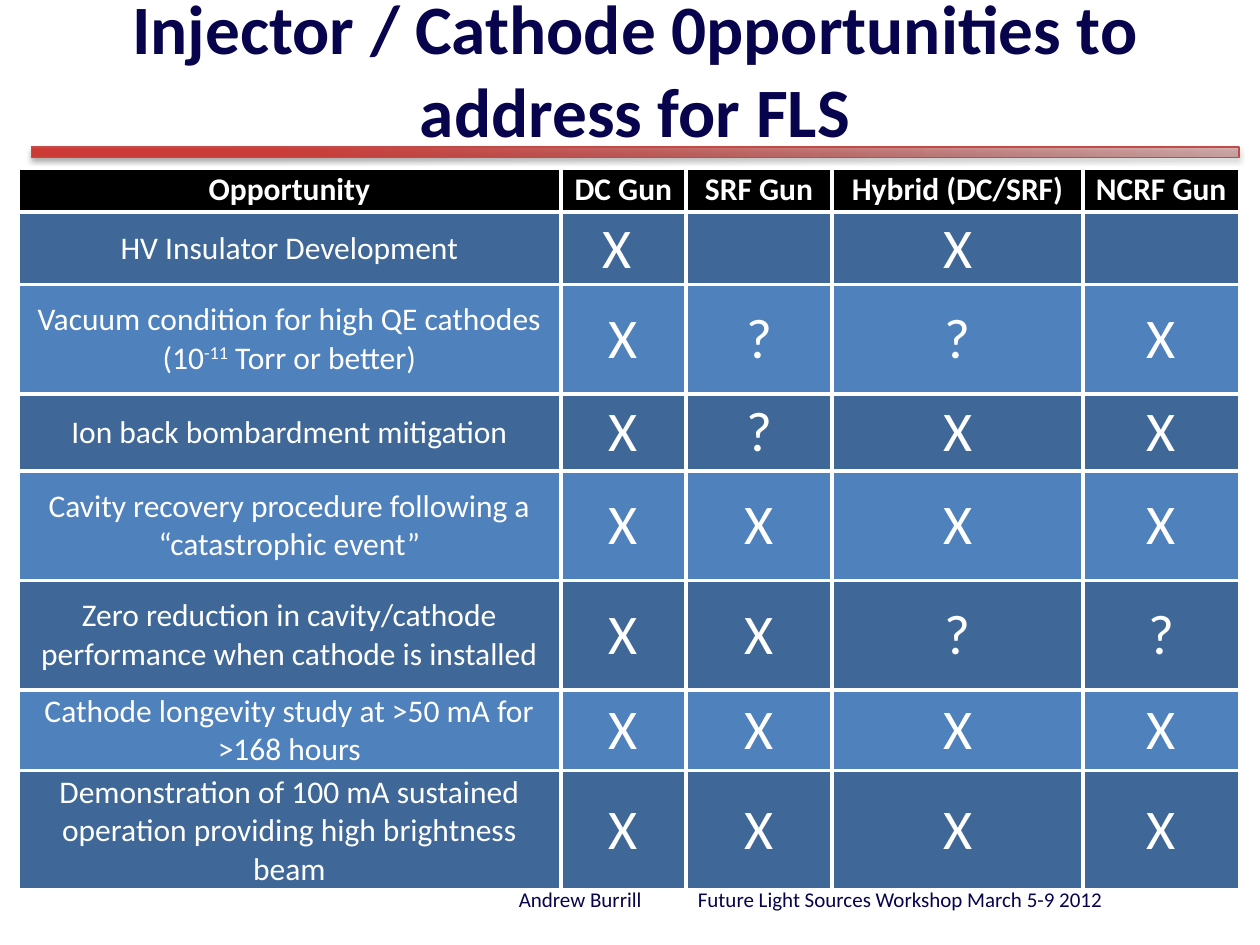
"""Build the slide on injector and cathode opportunities by gun type."""
from pptx import Presentation
from pptx.dml.color import RGBColor
from pptx.enum.shapes import MSO_SHAPE
from pptx.enum.text import MSO_ANCHOR, PP_ALIGN
from pptx.oxml import parse_xml
from pptx.util import Pt

RECTANGLE = MSO_SHAPE.RECTANGLE
MIDDLE = MSO_ANCHOR.MIDDLE
CENTER, LEFT = PP_ALIGN.CENTER, PP_ALIGN.LEFT
DRAWING_NS = 'xmlns:a="http://schemas.openxmlformats.org/drawingml/2006/main"'
NAVY, WHITE, BLACK = "08034D", "FFFFFF", "000000"
DARK_BLUE, LIGHT_BLUE = "3F6797", "4F81BD"


def color(value):
    return RGBColor.from_string(value)


def add_run(paragraph, text, size, fill, bold=False):
    run = paragraph.add_run()
    run.text = text
    run.font.name = "Calibri"
    run.font.size = Pt(size)
    run.font.bold = bold
    run.font.color.rgb = color(fill)
    return run


prs = Presentation()
prs.slide_width, prs.slide_height = Pt(720), Pt(540)
slide = prs.slides.add_slide(prs.slide_layouts[6])

divider = slide.shapes.add_shape(RECTANGLE, Pt(18), Pt(84), Pt(690), Pt(6))
divider.line.color.rgb = color("BF4C48")
divider.line.width = Pt(0.75)
divider_props = divider._element.spPr
divider_props.prstGeom.addnext(parse_xml(
    f'<a:gradFill {DRAWING_NS} rotWithShape="1"><a:gsLst>'
    '<a:gs pos="0"><a:srgbClr val="9C2F2D"><a:alpha val="34000"/></a:srgbClr></a:gs>'
    '<a:gs pos="80000"><a:srgbClr val="CB3E3A"/></a:gs>'
    '<a:gs pos="100000"><a:srgbClr val="CE3B37"/></a:gs>'
    '</a:gsLst><a:lin ang="10800000" scaled="0"/></a:gradFill>'))
divider_props.append(parse_xml(
    f'<a:effectLst {DRAWING_NS}><a:outerShdw blurRad="{Pt(3.1)}" dist="{Pt(1.8)}" '
    'dir="5400000" rotWithShape="0"><a:srgbClr val="000000"><a:alpha val="35000"/>'
    '</a:srgbClr></a:outerShdw></a:effectLst>'))

title = slide.shapes.add_textbox(Pt(39), Pt(0.7), Pt(648), Pt(77)).text_frame
title.word_wrap = True
title.vertical_anchor = MIDDLE
title.paragraphs[0].alignment = CENTER
add_run(title.paragraphs[0], "Injector / Cathode 0pportunities to address for FLS",
        39.6, NAVY, True)

headings = ["Opportunity", "DC Gun", "SRF Gun", "Hybrid (DC/SRF)", "NCRF Gun"]
opportunities = [
    (["HV Insulator Development"], ["X ", "", "X", ""]),
    (["Vacuum condition for high QE cathodes (10", "-11", " Torr or better)"],
     ["X", "?", "?", "X"]),
    (["Ion back bombardment mitigation"], ["X", "?", "X", "X"]),
    (["Cavity recovery procedure following a “catastrophic event”"],
     ["X", "X", "X", "X"]),
    (["Zero reduction in cavity/cathode performance when cathode is installed"],
     ["X", "X", "?", "?"]),
    (["Cathode longevity study at >50 mA for >168 hours"], ["X", "X", "X", "X"]),
    (["Demonstration of 100 mA sustained operation providing high brightness beam"],
     ["X", "X", "X", "X"]),
]
column_widths = [310.3, 71.5, 83.5, 143.5, 89.2]
row_heights = [25.2, 35.3, 62.6, 43.9, 62.6, 62.6, 43.9, 62.6]
rows = [[[heading] for heading in headings]]
rows += [[name] + [[mark] for mark in marks] for name, marks in opportunities]

table = slide.shapes.add_table(len(rows), len(headings), Pt(10.2), Pt(96),
                               Pt(sum(column_widths)), Pt(sum(row_heights))).table
for column, width in zip(table.columns, column_widths):
    column.width = Pt(width)
for row, height in zip(table.rows, row_heights):
    row.height = Pt(height)

for r, row in enumerate(rows):
    row_fill = BLACK if r == 0 else DARK_BLUE if r % 2 else LIGHT_BLUE
    for c, pieces in enumerate(row):
        cell = table.cell(r, c)
        cell.vertical_anchor = MIDDLE
        cell.margin_left = cell.margin_right = Pt(7.2)
        cell.margin_top = cell.margin_bottom = Pt(1.5)
        for side in ("lnL", "lnR", "lnT", "lnB"):
            cell._tc.get_or_add_tcPr().append(parse_xml(
                f'<a:{side} {DRAWING_NS} w="{Pt(2.25)}"><a:solidFill>'
                f'<a:srgbClr val="{WHITE}"/></a:solidFill></a:{side}>'))
        cell.fill.solid()
        cell.fill.fore_color.rgb = color(row_fill)
        paragraph = cell.text_frame.paragraphs[0]
        paragraph.alignment = CENTER
        for piece in filter(None, pieces):
            run = add_run(paragraph, piece, 32 if r and c else 18, WHITE, r == 0)
            if piece == "-11":
                run._r.get_or_add_rPr().set("baseline", "30000")

footer = slide.shapes.add_textbox(Pt(281.5), Pt(499.7), Pt(365), Pt(28.8)).text_frame
footer.word_wrap = True
footer.vertical_anchor = MIDDLE
footer.margin_left = Pt(15)
credit = footer.paragraphs[0]
credit.alignment = LEFT
credit._p.get_or_add_pPr().append(parse_xml(
    f'<a:tabLst {DRAWING_NS}><a:tab pos="{Pt(102.3)}" algn="l"/></a:tabLst>'))
add_run(credit, "Andrew Burrill\tFuture Light Sources Workshop March 5-9 2012", 12, NAVY)

prs.save("out.pptx")
